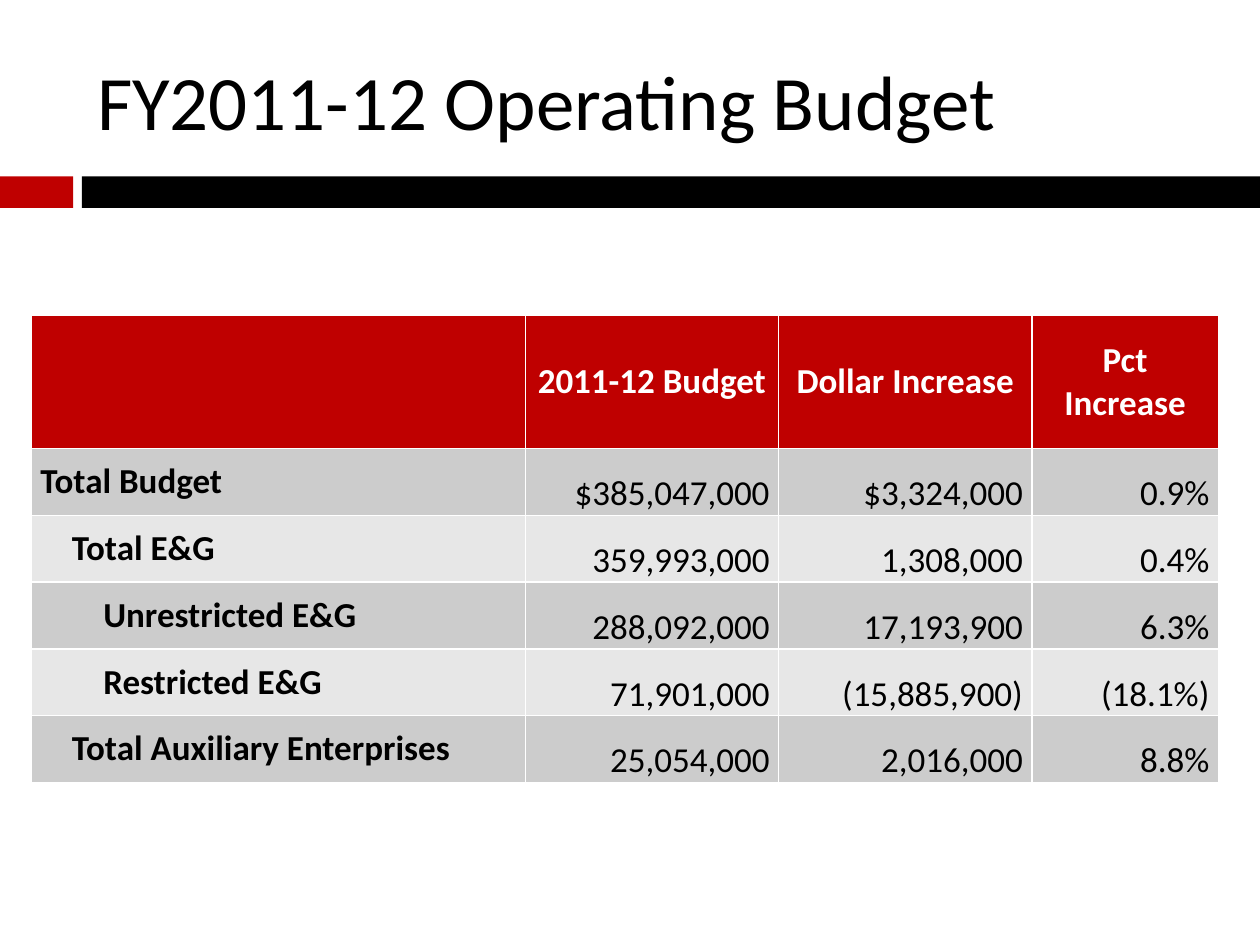
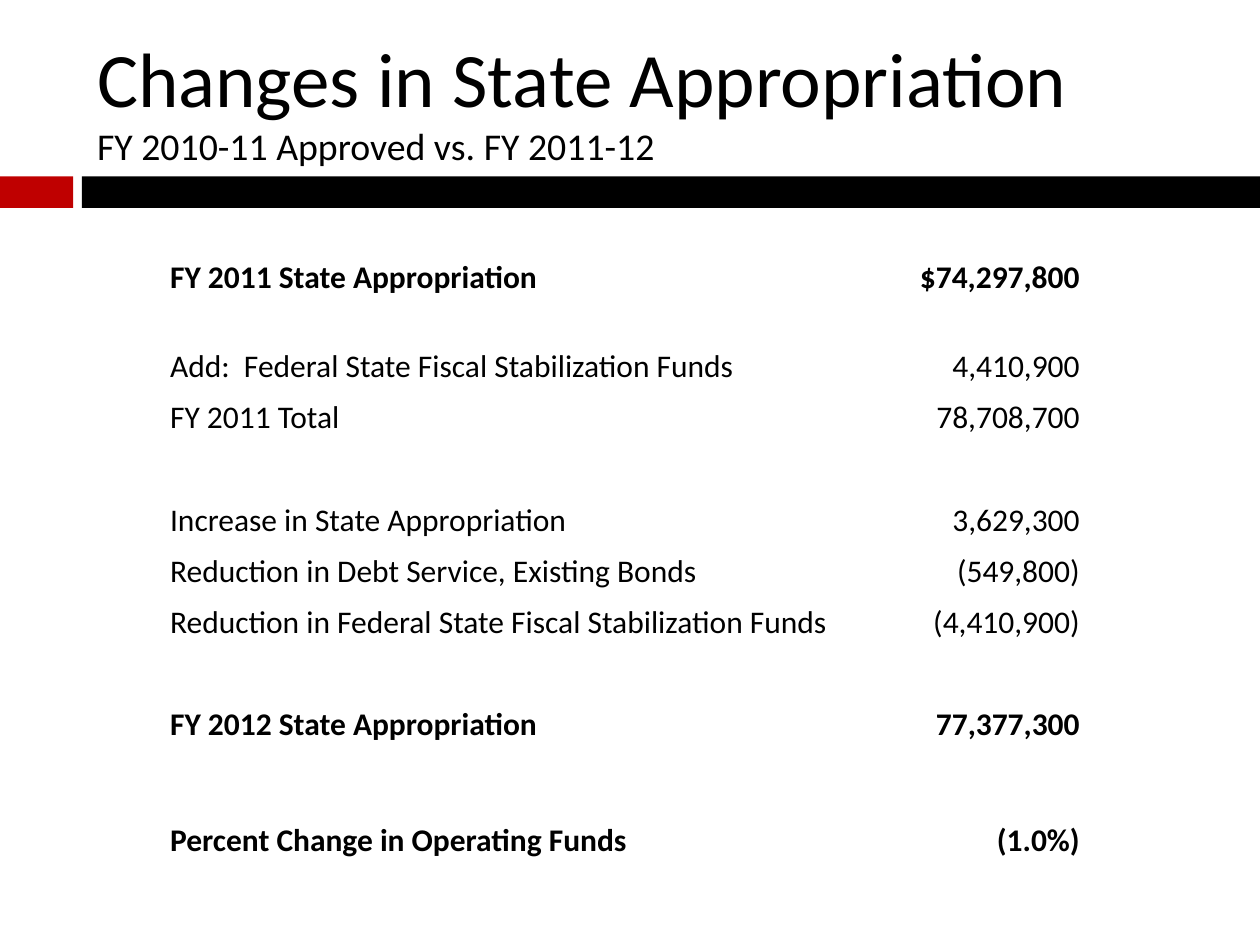
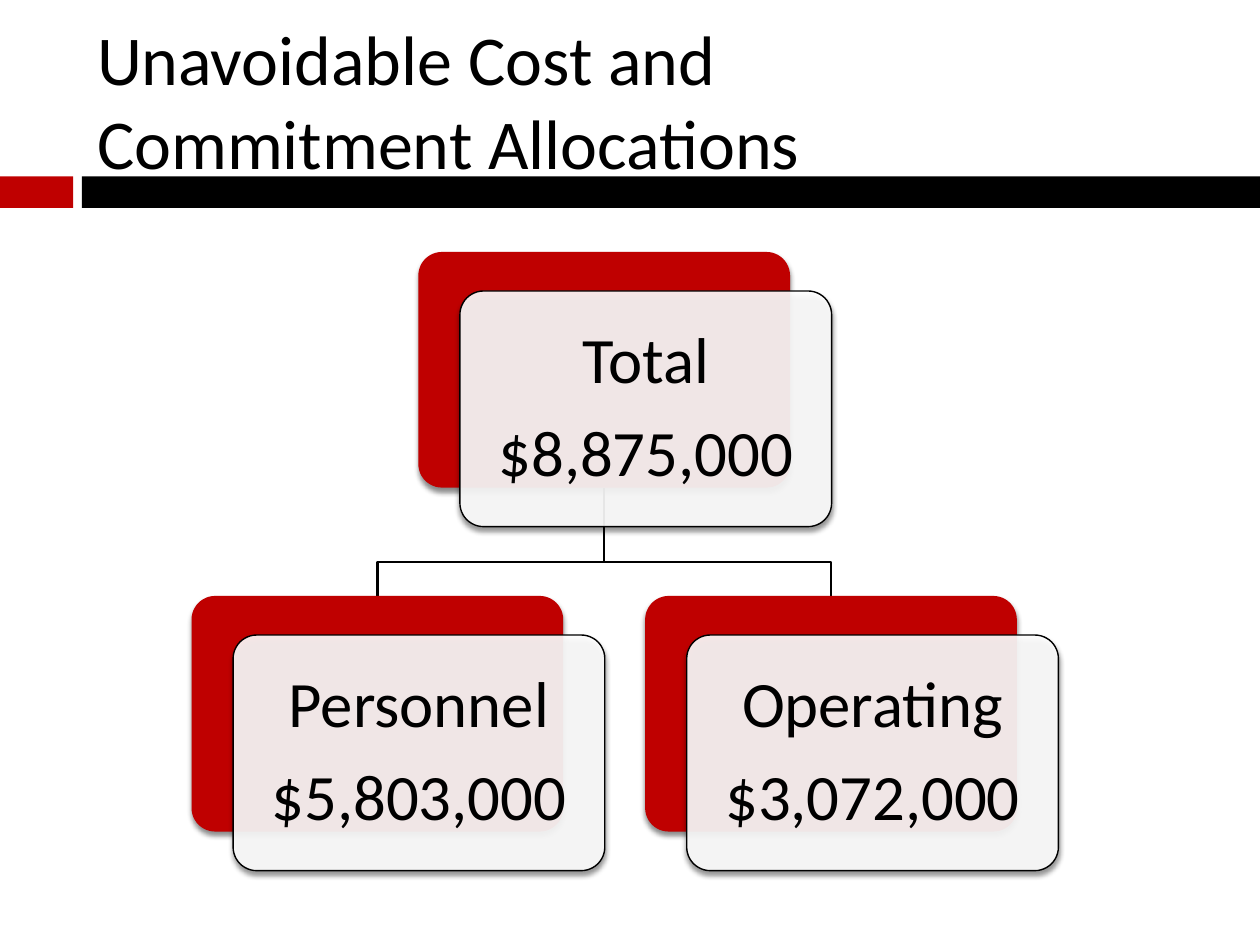
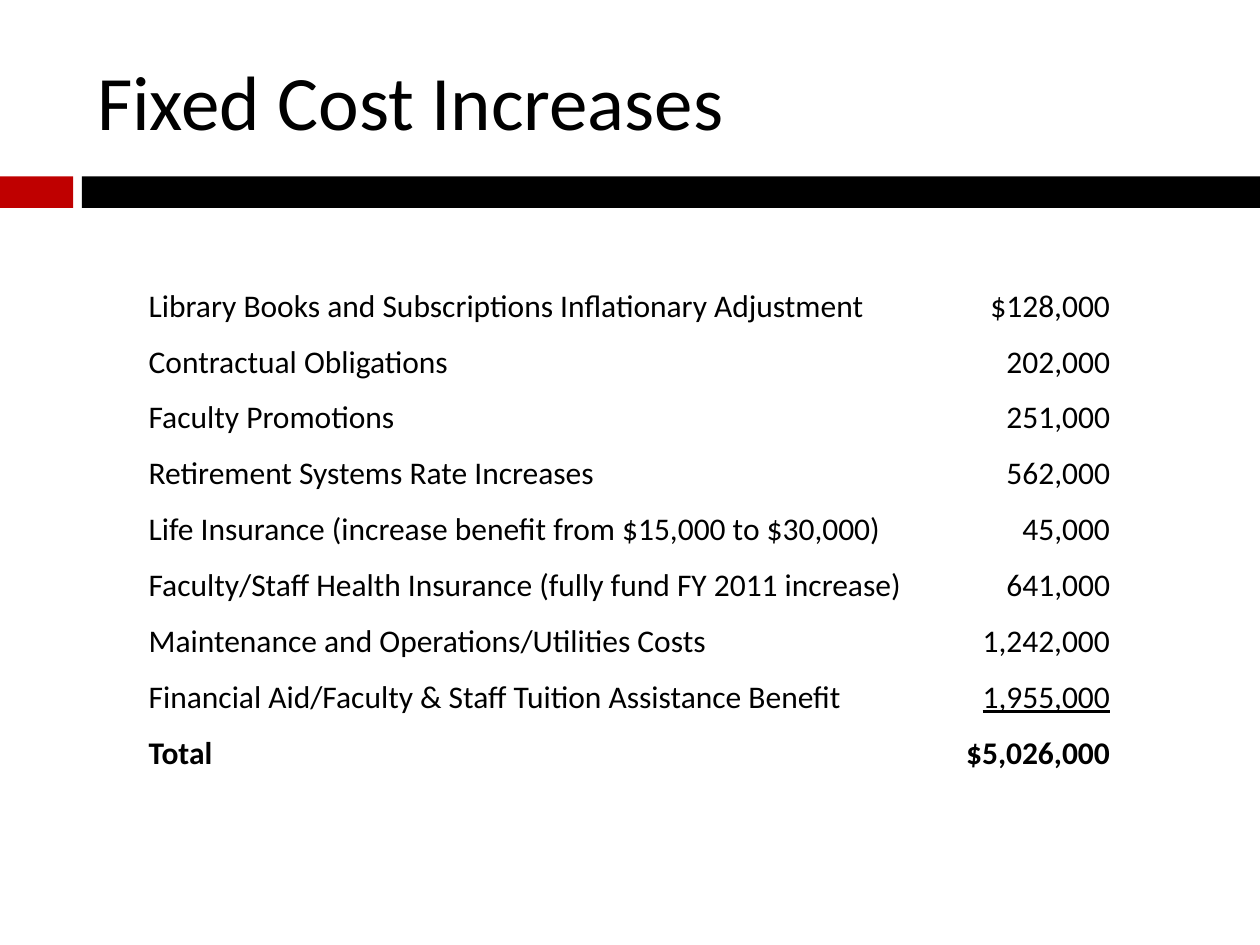
import pptx
import pptx.util
import pptx.dml.color
import pptx.enum.shapes
import pptx.enum.text
import pptx.oxml

Inches = pptx.util.Inches
Pt = pptx.util.Pt
ALIGN = pptx.enum.text.PP_ALIGN
ANCHOR = pptx.enum.text.MSO_ANCHOR
SHAPE = pptx.enum.shapes.MSO_SHAPE

HEX = {
    "red": "BF0000",
    "black": "000000",
    "white": "FFFFFF",
    "dark": "CCCCCC",
    "light": "E7E7E7",
}
FONT = "Calibri"
TITLE = (0.67, 0.25, 8.92, 1.08)
BANDS = [("red", 0, 0.58), ("black", 0.65, 9.35)]
SHADOW = (
    '<a:effectLst xmlns:a="http://schemas.openxmlformats.org/drawingml/2006/main">'
    '<a:outerShdw blurRad="38100" dist="30480" dir="5400000" rotWithShape="0">'
    '<a:srgbClr val="000000"><a:alpha val="45000"/></a:srgbClr>'
    "</a:outerShdw></a:effectLst>"
)

BUDGET = [
    ("", "2011-12 Budget", "Dollar Increase", "Pct Increase"),
    ("Total Budget", "$385,047,000", "$3,324,000", "0.9%"),
    ("Total E&G", "359,993,000", "1,308,000", "0.4%"),
    ("Unrestricted E&G", "288,092,000", "17,193,900", "6.3%"),
    ("Restricted E&G", "71,901,000", "(15,885,900)", "(18.1%)"),
    ("Total Auxiliary Enterprises", "25,054,000", "2,016,000", "8.8%"),
]
LEVELS = [0, 0, 1, 2, 2, 1]
STATE = [
    ("FY 2011 State Appropriation", "$74,297,800"),
    ("Add:  Federal State Fiscal Stabilization Funds", "4,410,900"),
    ("FY 2011 Total", "78,708,700"),
    ("", ""),
    ("Increase in State Appropriation", "3,629,300"),
    ("Reduction in Debt Service, Existing Bonds", "(549,800)"),
    ("Reduction in Federal State Fiscal Stabilization Funds", "(4,410,900)"),
    ("", ""),
    ("FY 2012 State Appropriation", "77,377,300"),
    ("", ""),
    ("Percent Change in Operating Funds", "(1.0%)"),
]
COSTS = [
    ("Library Books and Subscriptions Inflationary Adjustment", "$128,000"),
    ("Contractual Obligations", "202,000"),
    ("Faculty Promotions", "251,000"),
    ("Retirement Systems Rate Increases", "562,000"),
    ("Life Insurance (increase benefit from $15,000 to $30,000)", "45,000"),
    ("Faculty/Staff Health Insurance (fully fund FY 2011 increase)", "641,000"),
    ("Maintenance and Operations/Utilities Costs", "1,242,000"),
    ("Financial Aid/Faculty & Staff Tuition Assistance Benefit", "1,955,000"),
    ("Total", "$5,026,000"),
]


def shade(name):
    return pptx.dml.color.RGBColor.from_string(HEX[name])


def apply(target, form):
    for key, value in form.items():
        setattr(target, key, value)


def place(shape, box):
    names = ("left", "top", "width", "height")
    apply(shape, dict(zip(names, map(Inches, box))))


def paint(thing, name):
    thing.fill.solid()
    thing.fill.fore_color.rgb = shade(name)


def write(para, text, size, color="black", **form):
    run = para.add_run()
    run.text = text
    apply(run.font, {"name": FONT, "size": Pt(size), **form})
    run.font.color.rgb = shade(color)


def add_box(slide, kind, box, color):
    shape = slide.shapes.add_shape(kind, *map(Inches, box))
    shape.shadow.inherit = False
    paint(shape, color)
    shape.line.fill.background()
    return shape


def add_bands(slide):
    tree = slide.slide_layout.shapes._spTree
    for color, left, width in BANDS:
        band = add_box(slide, SHAPE.RECTANGLE, (left, 1.4, width, 0.25), color)
        tree.append(band._element)


def add_page(deck, lines):
    slide = deck.slides.add_slide(deck.slide_layouts[5])
    title = slide.shapes.title
    place(title, TITLE)
    frame = title.text_frame
    apply(frame, {"vertical_anchor": ANCHOR.MIDDLE, "word_wrap": True,
                  "auto_size": pptx.enum.text.MSO_AUTO_SIZE.NONE})
    para = frame.paragraphs[0]
    para.alignment = ALIGN.LEFT
    for spot, (text, size) in enumerate(lines):
        if spot:
            para.add_line_break()
        write(para, text, size)
    return slide


def add_grid(slide, box, cols, rows, head):
    table = slide.shapes.add_table(len(rows), len(cols), *map(Inches, box)).table
    apply(table, {"first_row": head, "horz_banding": False})
    for col, width in zip(table.columns, cols):
        col.width = Inches(width)
    for row, height in zip(table.rows, rows):
        row.height = Inches(height)
    return table


def add_budget(slide, box):
    table = add_grid(slide, box, [3.92, 2.01, 2.01, 1.48], [1.06] + [0.53] * 5, True)
    edges = {"margin_left": Inches(0.07), "margin_right": Inches(0.07),
             "margin_top": 0, "margin_bottom": 0}
    for r, row in enumerate(BUDGET):
        for c, text in enumerate(row):
            cell = table.cell(r, c)
            value = r > 0 and c > 0
            apply(cell, edges)
            cell.vertical_anchor = ANCHOR.BOTTOM if value else ANCHOR.MIDDLE
            paint(cell, "red" if r == 0 else "dark" if r % 2 else "light")
            if not text:
                continue
            para = cell.text_frame.paragraphs[0]
            write(para, text, 20, "black" if r else "white", bold=not value)
            para.alignment = ALIGN.RIGHT if value else ALIGN.CENTER
            if c == 0:
                para.alignment = ALIGN.JUSTIFY
                para._p.get_or_add_pPr().set("marL", str(Inches(0.25 * LEVELS[r])))


def add_list(slide, box, cols, rows, data, bold, under=()):
    table = add_grid(slide, box, cols, rows, False)
    for r, row in enumerate(data):
        for c, text in enumerate(row):
            cell = table.cell(r, c)
            cell.fill.background()
            if text:
                para = cell.text_frame.paragraphs[0]
                para.alignment = ALIGN.RIGHT if c else ALIGN.LEFT
                write(para, text, 18, bold=r in bold,
                      underline=c == 1 and r in under)


def add_card(slide, box, lines):
    left, top, width, height = box
    back = add_box(slide, SHAPE.ROUNDED_RECTANGLE, box, "red")
    front = add_box(slide, SHAPE.ROUNDED_RECTANGLE,
                    (left + 0.33, top + 0.31, width, height), "white")
    front.line.color.rgb = shade("black")
    front.line.width = Pt(0.79)
    tint = front.fill._xPr.solidFill[0]
    tint.append(pptx.oxml.parse_xml(
        '<a:alpha xmlns:a="http://schemas.openxmlformats.org/drawingml/2006/main"'
        ' val="90000"/>'))
    for shape in (back, front):
        shape.adjustments[0] = 0.1
        props = shape._element.spPr
        props.replace(props.effectLst, pptx.oxml.parse_xml(SHADOW))
    frame = front.text_frame
    sides = ("left", "top", "right", "bottom")
    apply(frame, {"margin_" + side: Inches(0.15) for side in sides})
    apply(frame, {"word_wrap": True, "vertical_anchor": ANCHOR.MIDDLE})
    for spot, text in enumerate(lines):
        para = frame.add_paragraph() if spot else frame.paragraphs[0]
        apply(para, {"alignment": ALIGN.CENTER, "line_spacing": 0.9,
                     "space_after": Pt(13)})
        write(para, text, 37)


def add_link(slide, start, bend, end):
    points = [(start[0], bend), (end[0], bend), end]
    pen = slide.shapes.build_freeform(*map(Inches, start), scale=1.0)
    pen.add_line_segments([tuple(map(Inches, spot)) for spot in points], close=False)
    link = pen.convert_to_shape()
    link.shadow.inherit = False
    link.fill.background()
    link.line.color.rgb = shade("black")
    link.line.width = Pt(1.5)


def add_tree(slide, box):
    left, top, width, height = box
    wide, tall, step, drop = 2.95, 1.87, 3.6, 2.73
    head = left + step / 2
    start = (head + wide / 2, top + tall)
    kids = [("Personnel", "$5,803,000"), ("Operating", "$3,072,000")]
    spots = [left + step * i for i in range(len(kids))]
    for spot in reversed(spots):
        add_link(slide, start, top + 2.46, (spot + wide / 2, top + drop))
    add_card(slide, (head, top, wide, tall), ("Total", "$8,875,000"))
    for spot, lines in zip(spots, kids):
        add_card(slide, (spot, top + drop, wide, tall), lines)


def main():
    deck = pptx.Presentation()
    apply(deck, {"slide_width": Inches(10), "slide_height": Inches(7.5)})

    slide = add_page(deck, [("FY2011-12 Operating Budget", 44)])
    add_bands(slide)
    add_budget(slide, (0.25, 2.5, 9.42, 3.73))

    slide = add_page(deck, [("Changes in State Appropriation", 44),
                            ("FY 2010-11 Approved vs. FY 2011-12", 21.6)])
    add_list(slide, (1.25, 2, 7.42, 4.95), [5.43, 1.99],
             [0.71] + [0.4] * 8 + [0.52] * 2, STATE, (0, 8, 10))

    slide = add_page(deck, [("Unavoidable Cost and", 40),
                            ("Commitment Allocations", 40)])
    add_tree(slide, (1.52, 2, 6.88, 4.91))

    slide = add_page(deck, [("Fixed Cost Increases", 44)])
    count = len(COSTS)
    add_list(slide, (1.08, 2.23, 7.83, 3.99), [6.33, 1.5],
             [3.99 / count] * count, COSTS, (count - 1,), (count - 2,))

    deck.save("out.pptx")


if __name__ == "__main__":
    main()
